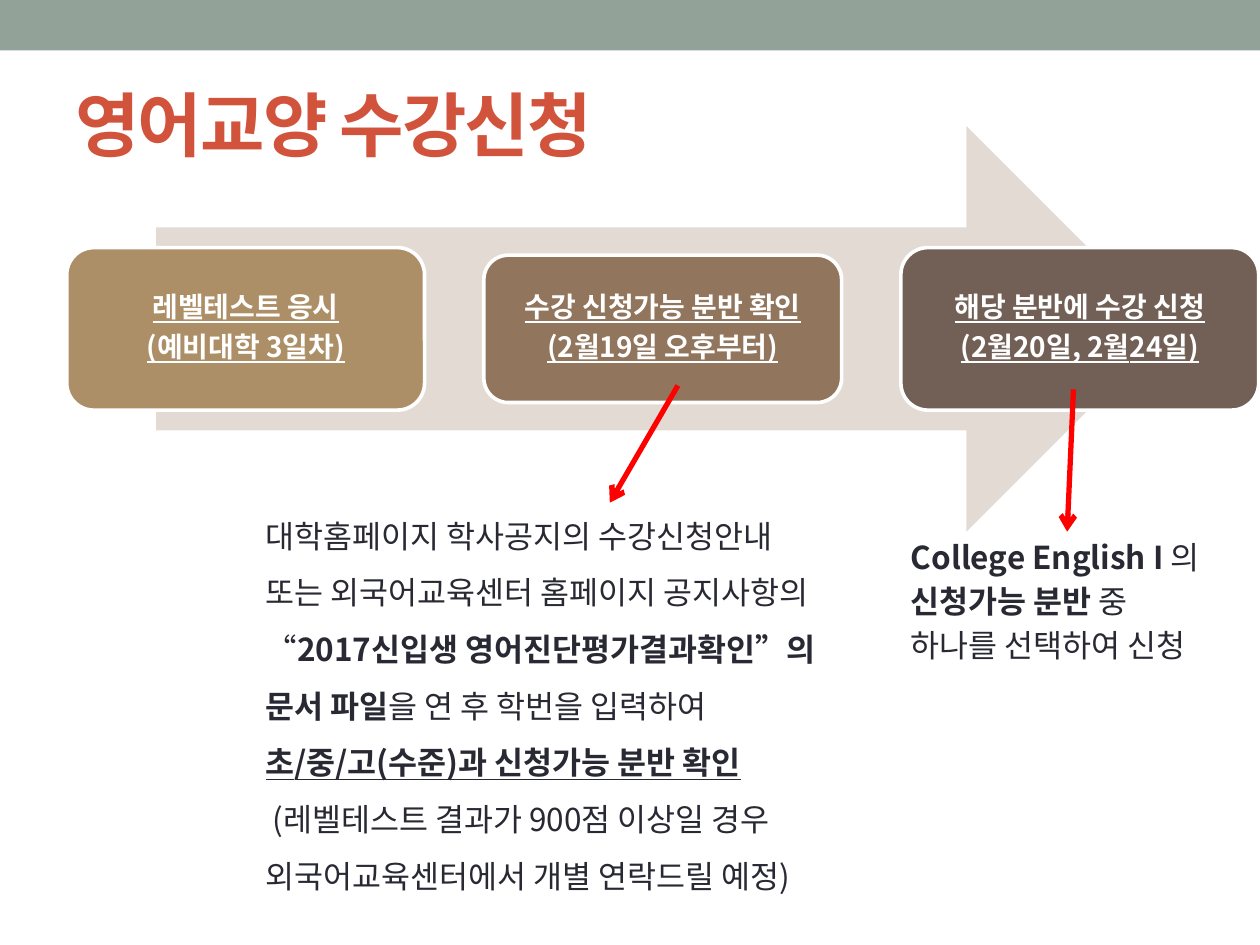
from lxml import etree
from pptx import Presentation
from pptx.dml.color import RGBColor
from pptx.enum.shapes import MSO_CONNECTOR, MSO_SHAPE
from pptx.enum.text import MSO_ANCHOR, PP_ALIGN
from pptx.oxml.ns import qn
from pptx.util import Inches, Pt

RECT, ROUND = MSO_SHAPE.RECTANGLE, MSO_SHAPE.ROUNDED_RECTANGLE
ARROW, LINE = MSO_SHAPE.RIGHT_ARROW, MSO_CONNECTOR.STRAIGHT
TOP, MID = MSO_ANCHOR.TOP, MSO_ANCHOR.MIDDLE
LEFT, CENTER = PP_ALIGN.LEFT, PP_ALIGN.CENTER
COLS, ROWS = 100, 75
WIDE, HIGH = Inches(10), Inches(7.5)
KR = "Noto Sans CJK KR"
WHITE, INK, RED = "FFFFFF", "292934", "FF0000"
BOLD, PLAIN = {"bold": True}, {"bold": False}
MARK = {"bold": True, "underline": True}


def color(code):
    return RGBColor.from_string(code)


def grid(*cells):
    """Turn alternating columns and rows into lengths."""
    return [int(c * (HIGH / ROWS if i % 2 else WIDE / COLS))
            for i, c in enumerate(cells)]


def draw(slide, kind, box, fill, edge=None):
    shape = slide.shapes.add_shape(kind, *grid(*box))
    shape.shadow.inherit = False
    shape.fill.solid()
    shape.fill.fore_color.rgb = color(fill)
    if edge:
        shape.line.color.rgb = color(edge)
        shape.line.width = Pt(2.08)
    else:
        shape.line.fill.background()
    return shape


def write(shape, paras, size, ink, para, name=KR, anchor=TOP, inset=None):
    """Fill a shape with paragraphs, each a list of (text, format) runs."""
    frame = shape.text_frame
    frame.word_wrap = True
    frame.vertical_anchor = anchor
    if inset is not None:
        for side in ("left", "right", "top", "bottom"):
            setattr(frame, f"margin_{side}", Inches(inset))
    for i, runs in enumerate(paras):
        p = frame.add_paragraph() if i else frame.paragraphs[0]
        for key, value in para.items():
            setattr(p, key, value)
        for text, look in runs:
            run = p.add_run()
            run.text = text
            look = {"size": Pt(size), "name": name, **look}
            for key, value in look.items():
                setattr(run.font, key, value)
            run.font.color.rgb = color(ink)
            east = etree.SubElement(run.font._element, qn("a:ea"))
            east.set("typeface", KR)


def title(slide, box, text):
    shape = slide.shapes.add_textbox(*grid(*box))
    write(shape, [[(text, BOLD)]], 40, "D2533C", {"alignment": LEFT},
          "Arial", MID)
    shape.text_frame.paragraphs[0].runs[0].font._element.set("spc", "-100")


def steps(slide, box, items):
    """Place equal step cards over a broad arrow."""
    left, top, width, height = box
    draw(slide, ARROW, (left + 7.1, top, 80.4, height), "E3DBD3")
    card = 28.4
    pitch = (width - card) / (len(items) - 1)
    para = {"alignment": CENTER, "line_spacing": 0.9, "space_after": Pt(5.6)}
    for i, (fill, tall, lines) in enumerate(items):
        spot = (left + i * pitch, top + (height - tall) / 2, card, tall)
        shape = draw(slide, ROUND, spot, fill, WHITE)
        write(shape, [[(line, MARK)] for line in lines], 16, WHITE, para,
              anchor=MID, inset=0.1)


def note(slide, box, paras, para):
    shape = slide.shapes.add_textbox(*grid(*box))
    write(shape, paras, 18, INK, {"alignment": LEFT, **para})


def pointer(slide, ends):
    link = slide.shapes.add_connector(LINE, *grid(*ends))
    link.line.color.rgb = color(RED)
    link.line.width = Pt(3)
    tail = etree.SubElement(link.line._get_or_add_ln(), qn("a:tailEnd"))
    tail.set("type", "arrow")
    etree.SubElement(link._element.spPr, qn("a:effectLst"))


def main():
    deck = Presentation()
    deck.slide_width, deck.slide_height = WIDE, HIGH
    slide = deck.slides.add_slide(deck.slide_layouts[6])
    draw(slide, RECT, (0, 0, COLS, 4), "93A299")
    title(slide, (5, 5.8, 90, 8), "영어교양 수강신청")
    note(slide, (71.3, 42.2, 26.9, 12.6), [
        [("College English I ", BOLD), ("의", PLAIN)],
        [("신청가능 분반 ", BOLD), ("중", PLAIN)],
        [("하나를 선택하여 신청", PLAIN)],
    ], {"space_before": Pt(3.6)})
    steps(slide, (5.3, 10, 94.6, 32.2), [
        ("AD8F67", 12.9, ("레벨테스트 응시", "(예비대학 3일차)")),
        ("91755D", 11.7, ("수강 신청가능 분반 확인", "(2월19일 오후부터)")),
        ("726056", 12.9, ("해당 분반에 수강 신청", "(2월20일, 2월24일)")),
    ])
    note(slide, (20.1, 39, 47, 32.8), [
        [("대학홈페이지 학사공지의 수강신청안내 또는 외국어교육센터 "
          "홈페이지 공지사항의 “", PLAIN),
         ("2017신입생 영어진단평가결과확인”의 문서 파일", BOLD),
         ("을 연 후 학번을 입력하여", PLAIN)],
        [("초/중/고(수준)과 신청가능 분반 확인", MARK)],
        [(" (레벨테스트 결과가 900점 이상일 경우", PLAIN)],
        [("외국어교육센터에서 개별 연락드릴 예정)", PLAIN)],
    ], {"line_spacing": 1.5})
    for ends in ((53.8, 30.6, 48.4, 39.9), (85.2, 30.9, 84.7, 42.2)):
        pointer(slide, ends)
    deck.save("out.pptx")


if __name__ == "__main__":
    main()
